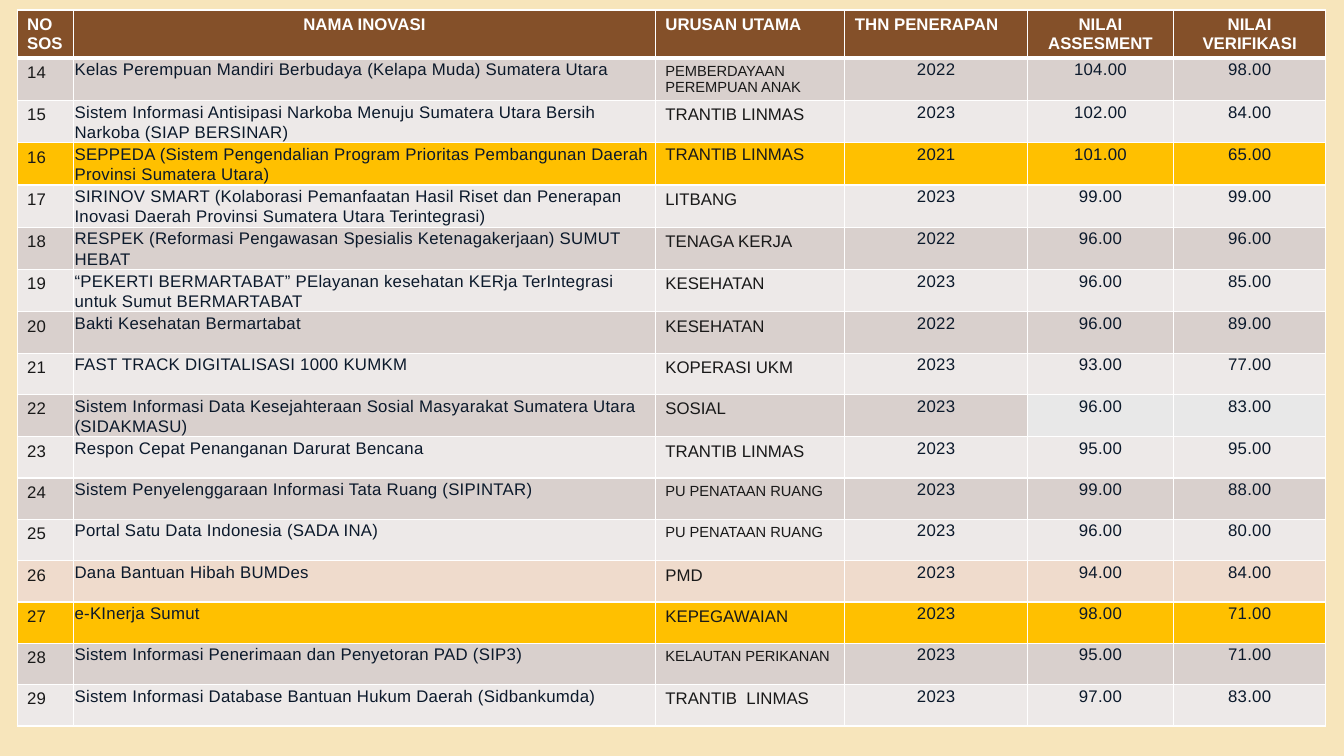
from dataclasses import dataclass
from typing import NamedTuple, Optional

from lxml.etree import SubElement
from pptx import Presentation
from pptx.dml.color import RGBColor as RGB
from pptx.enum.text import PP_ALIGN as Align
from pptx.oxml.ns import qn
from pptx.util import Inches, Pt


@dataclass(frozen=True)
class Theme:
    font: str = "Arial"
    size: float = 12
    small: float = 10.5
    spacing: float = 1.07
    tracking: int = 20
    background: str = "F7E5BB"
    header: str = "845029"
    white: str = "FFFFFF"
    plain: str = "191919"
    navy: str = "0B192B"
    dark_band: str = "D9D0CD"
    light_band: str = "EDE9E8"
    gold: str = "FFC000"
    peach: str = "EFDBCC"
    grey: str = "E8E8E8"


class Column(NamedTuple):
    title: str
    span: int
    title_align: Optional[Align] = None
    align: Optional[Align] = None
    tight: bool = True


class Innovation(NamedTuple):
    number: int
    name: str
    sector: str
    year: int
    assessment: int
    verification: int


THEME = Theme()

# Grid: 1333 columns by 750 rows across the slide
WIDTH, HEIGHT = Inches(13.33), Inches(7.5)
GRID_X, GRID_Y = WIDTH / 1333, HEIGHT / 750
LEFT, TOP, ROW_SPAN = 17, 10, 41
INSET_X, INSET_Y, TIGHT = 10, 5, 1
LONG_SECTOR = 16

COLUMNS = [
    Column("NO\nSOS", 56, tight=False),
    Column("NAMA INOVASI", 577, Align.CENTER),
    Column("URUSAN UTAMA", 188, tight=False),
    Column("THN PENERAPAN", 181, align=Align.CENTER),
    Column("NILAI ASSESMENT", 145, Align.CENTER, Align.CENTER),
    Column("NILAI VERIFIKASI", 151, Align.CENTER, Align.CENTER),
]
SECTOR = 2

INNOVATIONS = [
    Innovation(14, "Kelas Perempuan Mandiri Berbudaya (Kelapa Muda) Sumatera Utara",
               "PEMBERDAYAAN PEREMPUAN ANAK", 2022, 104, 98),
    Innovation(15, "Sistem Informasi Antisipasi Narkoba Menuju Sumatera Utara Bersih "
               "Narkoba (SIAP BERSINAR)", "TRANTIB LINMAS", 2023, 102, 84),
    Innovation(16, "SEPPEDA (Sistem Pengendalian Program Prioritas Pembangunan "
               "Daerah Provinsi Sumatera Utara)", "TRANTIB LINMAS", 2021, 101, 65),
    Innovation(17, "SIRINOV SMART (Kolaborasi Pemanfaatan Hasil Riset dan Penerapan "
               "Inovasi Daerah Provinsi Sumatera Utara Terintegrasi)",
               "LITBANG", 2023, 99, 99),
    Innovation(18, "RESPEK (Reformasi Pengawasan Spesialis Ketenagakerjaan) SUMUT HEBAT",
               "TENAGA KERJA", 2022, 96, 96),
    Innovation(19, "“PEKERTI BERMARTABAT” PElayanan kesehatan KERja TerIntegrasi "
               "untuk Sumut BERMARTABAT", "KESEHATAN", 2023, 96, 85),
    Innovation(20, "Bakti Kesehatan Bermartabat", "KESEHATAN", 2022, 96, 89),
    Innovation(21, "FAST TRACK DIGITALISASI 1000 KUMKM", "KOPERASI UKM", 2023, 93, 77),
    Innovation(22, "Sistem Informasi Data Kesejahteraan Sosial Masyarakat Sumatera Utara "
               "(SIDAKMASU)", "SOSIAL", 2023, 96, 83),
    Innovation(23, "Respon Cepat Penanganan Darurat Bencana",
               "TRANTIB LINMAS", 2023, 95, 95),
    Innovation(24, "Sistem Penyelenggaraan Informasi Tata Ruang (SIPINTAR)",
               "PU PENATAAN RUANG", 2023, 99, 88),
    Innovation(25, "Portal Satu Data Indonesia (SADA INA)",
               "PU PENATAAN RUANG", 2023, 96, 80),
    Innovation(26, "Dana Bantuan Hibah BUMDes", "PMD", 2023, 94, 84),
    Innovation(27, "e-KInerja Sumut", "KEPEGAWAIAN", 2023, 98, 71),
    Innovation(28, "Sistem Informasi Penerimaan dan Penyetoran PAD (SIP3)",
               "KELAUTAN PERIKANAN", 2023, 95, 71),
    Innovation(29, "Sistem Informasi Database Bantuan Hukum Daerah (Sidbankumda)",
               "TRANTIB  LINMAS", 2023, 97, 83),
]
ROW_FILLS = {16: THEME.gold, 26: THEME.peach, 27: THEME.gold}
CELL_FILLS = {(22, 4): THEME.grey, (22, 5): THEME.grey}
RAISED_SECTORS = {16}


def set_borders(cell, bottom: float = 1, top: float = 1) -> None:
    """Draw white lines on all four sides of a cell."""
    tc_pr = cell._tc.get_or_add_tcPr()
    for tag, width in (("lnL", 1), ("lnR", 1), ("lnT", top), ("lnB", bottom)):
        ln = SubElement(tc_pr, qn(f"a:{tag}"), w=str(Pt(width)))
        fill = SubElement(ln, qn("a:solidFill"))
        SubElement(fill, qn("a:srgbClr"), val=THEME.white)


def write_cell(cell, text: str, *, fill: str, color: str, size: float = THEME.size,
               bold: bool = False, align: Optional[Align] = None,
               inset_x: int = INSET_X, inset_y: int = INSET_Y,
               spacing: Optional[float] = None, tracking: int = 0) -> None:
    """Fill a cell and write its formatted text."""
    cell.fill.solid()
    cell.fill.fore_color.rgb = RGB.from_string(fill)
    cell.margin_left = cell.margin_right = round(inset_x * GRID_X)
    cell.margin_top = cell.margin_bottom = round(inset_y * GRID_Y)
    p = cell.text_frame.paragraphs[0]
    p.text = text
    p.alignment = align
    p.line_spacing = spacing
    for br in p._p.findall(qn("a:br")):
        SubElement(br, qn("a:rPr"), sz=str(round(size * 100)))
    for r in p.runs:
        r.font.name, r.font.size, r.font.bold = THEME.font, Pt(size), bold
        r.font.color.rgb = RGB.from_string(color)
        if tracking:
            r.font._element.set("spc", str(tracking))


def write_header(table) -> None:
    for cell, column in zip(table.rows[0].cells, COLUMNS):
        set_borders(cell, bottom=3)
        write_cell(cell, column.title, fill=THEME.header, color=THEME.white,
                   bold=True, align=column.title_align)


def write_innovation(row, item: Innovation, first: bool) -> None:
    band = THEME.light_band if item.number % 2 else THEME.dark_band
    row_fill = ROW_FILLS.get(item.number, band)
    texts = [str(item.number), item.name, item.sector, str(item.year),
             f"{item.assessment:.2f}", f"{item.verification:.2f}"]
    for i, (cell, column, text) in enumerate(zip(row.cells, COLUMNS, texts)):
        raised = i == SECTOR and item.number in RAISED_SECTORS
        small = i == SECTOR and len(text) >= LONG_SECTOR
        set_borders(cell, top=3 if first else 1)
        write_cell(cell, text,
                   fill=CELL_FILLS.get((item.number, i), row_fill),
                   color=THEME.navy if column.tight else THEME.plain,
                   size=THEME.small if small else THEME.size,
                   align=column.align,
                   inset_x=TIGHT if column.tight else INSET_X,
                   inset_y=TIGHT if column.tight or raised else INSET_Y,
                   spacing=THEME.spacing if column.tight or raised else None,
                   tracking=THEME.tracking if column.tight else 0)


def main() -> None:
    prs = Presentation()
    prs.slide_width, prs.slide_height = WIDTH, HEIGHT
    s = prs.slides.add_slide(prs.slide_layouts[6])

    # Background
    s.background.fill.solid()
    s.background.fill.fore_color.rgb = RGB.from_string(THEME.background)

    # Table frame
    rows = len(INNOVATIONS) + 1
    width = sum(column.span for column in COLUMNS)
    table = s.shapes.add_table(
        rows, len(COLUMNS), round(LEFT * GRID_X), round(TOP * GRID_Y),
        round(width * GRID_X), round(rows * ROW_SPAN * GRID_Y)).table
    for table_column, column in zip(table.columns, COLUMNS):
        table_column.width = round(column.span * GRID_X)
    for row in table.rows:
        row.height = round(ROW_SPAN * GRID_Y)

    # Table contents
    write_header(table)
    for i, item in enumerate(INNOVATIONS):
        write_innovation(table.rows[i + 1], item, first=i == 0)

    prs.save("out.pptx")


if __name__ == "__main__":
    main()
